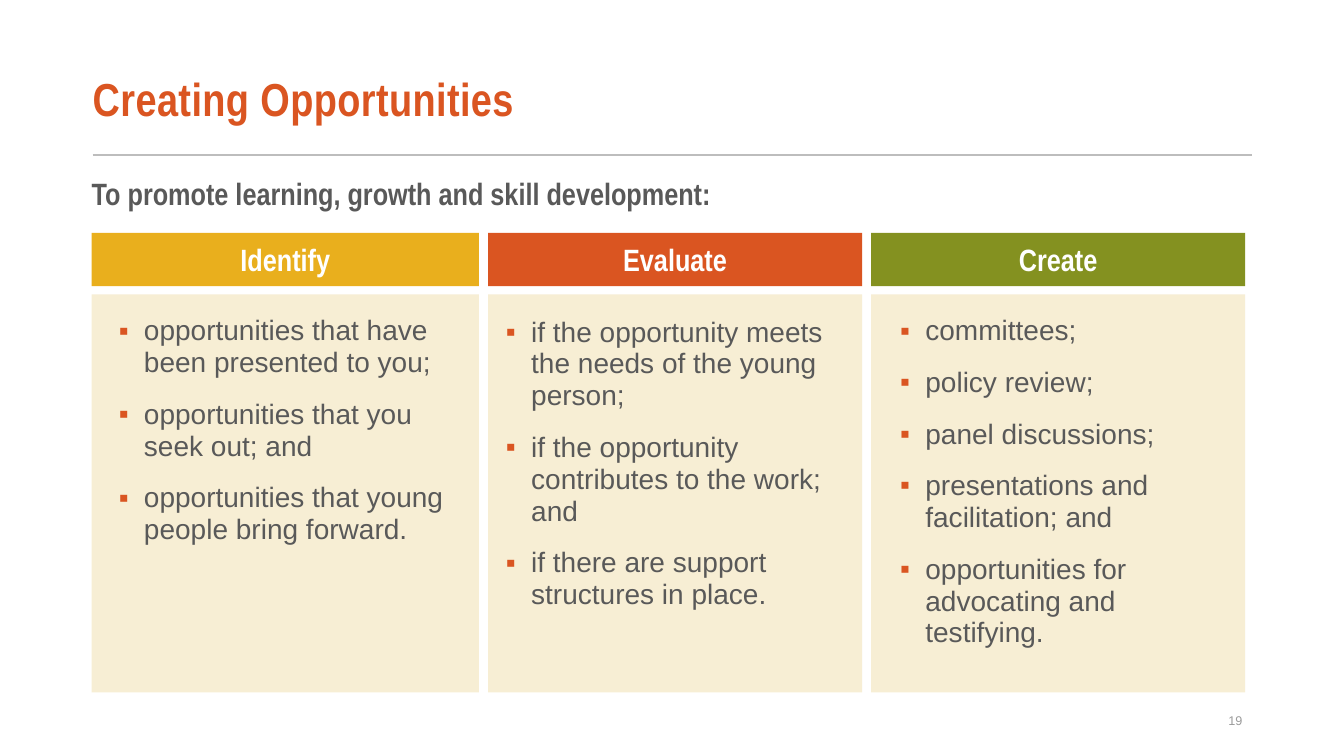
"""Builds the Creating Opportunities slide with three headed columns."""
from dataclasses import dataclass

from lxml.etree import SubElement
from pptx import Presentation
from pptx.dml.color import RGBColor
from pptx.enum.shapes import MSO_CONNECTOR, MSO_SHAPE
from pptx.enum.text import MSO_ANCHOR, PP_ALIGN
from pptx.oxml.ns import qn
from pptx.util import Inches, Pt

TITLE = "Creating Opportunities"
LEAD = "To promote learning, growth and skill development:"
PAGE = "19"
COLUMNS = [
    {"head": "Identify", "color": "E9AF1D", "width": 3.84, "text": (0.17, 0.16, 3.6),
     "items": ["opportunities that have been presented to you;",
               "opportunities that you seek out; and",
               "opportunities that young people bring forward."]},
    {"head": "Evaluate", "color": "DA5521", "width": 3.71, "text": (0.08, 0.17, 3.42),
     "items": ["if the opportunity meets the needs of the young person;",
               "if the opportunity contributes to the work; and",
               "if there are support structures in place."]},
    {"head": "Create", "color": "849120", "width": 3.71, "text": (0.19, 0.16, 3.43),
     "items": ["committees;", "policy review;", "panel discussions;",
               "presentations and facilitation; and",
               "opportunities for advocating and testifying."]},
]


@dataclass(frozen=True)
class Theme:
    """Colours, fonts and type sizes."""
    accent: str = "DA5521"
    body: str = "595959"
    panel: str = "F7EED4"
    rule: str = "BDBDBD"
    muted: str = "9B9B9B"
    white: str = "FFFFFF"
    narrow: str = "Arial Narrow"
    plain: str = "Arial"
    title: int = 33
    head: int = 22
    text: int = 20
    page: float = 9


T = Theme()
LEFT, WIDTH, GAP = 0.91, 11.5, 0.09
HEAD_TOP, HEAD_H, PANEL_H = 2.31, 0.53, 3.95
PANEL_TOP = HEAD_TOP + HEAD_H + 0.08


def rgb(value):
    return RGBColor.from_string(value)


def add_text(p, text, size, color, font, bold=False):
    r = p.add_run()
    r.text = text
    r.font.size, r.font.name, r.font.bold = Pt(size), font, bold
    r.font.color.rgb = rgb(color)
    return r


def add_box(s, x, y, w, h, inset=0.1, anchor=MSO_ANCHOR.TOP):
    tf = s.shapes.add_textbox(*map(Inches, (x, y, w, h))).text_frame
    tf.word_wrap = True
    tf.margin_left = Inches(inset)
    tf.vertical_anchor = anchor
    return tf


def add_rect(s, x, y, w, h, color):
    sp = s.shapes.add_shape(MSO_SHAPE.RECTANGLE, *map(Inches, (x, y, w, h)))
    sp.shadow.inherit = False
    sp.fill.solid()
    sp.fill.fore_color.rgb = rgb(color)
    sp.line.fill.background()
    return sp


def add_bullet(p):
    pPr = p._p.get_or_add_pPr()
    pPr.set("marL", str(Inches(0.25)))
    pPr.set("indent", str(Inches(-0.25)))
    SubElement(SubElement(pPr, qn("a:buClr")), qn("a:srgbClr"), val=T.accent)
    SubElement(pPr, qn("a:buFont"), typeface=T.plain)
    SubElement(pPr, qn("a:buChar"), char="▪")


def add_column(s, x, column):
    add_rect(s, x, PANEL_TOP, column["width"], PANEL_H, T.panel)
    sp = add_rect(s, x, HEAD_TOP, column["width"], HEAD_H, column["color"])
    tf = sp.text_frame
    tf.vertical_anchor = MSO_ANCHOR.MIDDLE
    tf.paragraphs[0].alignment = PP_ALIGN.CENTER
    add_text(tf.paragraphs[0], column["head"], T.head, T.white, T.narrow, True)

    dx, dy, w = column["text"]
    tf = add_box(s, x + dx, PANEL_TOP + dy, w, PANEL_H - 2 * dy)
    for i, item in enumerate(column["items"]):
        p = tf.add_paragraph() if i else tf.paragraphs[0]
        add_bullet(p)
        p.line_spacing = 0.95
        p.space_before = Pt(14 if i else 0)
        add_text(p, item, T.text, T.body, T.plain)


def main():
    prs = Presentation()
    prs.slide_width, prs.slide_height = Inches(13.33), Inches(7.5)
    s = prs.slides.add_slide(prs.slide_layouts[6])

    rule = s.shapes.add_connector(
        MSO_CONNECTOR.STRAIGHT, *map(Inches, (0.92, 1.54, 0.92 + WIDTH, 1.54)))
    rule.line.color.rgb, rule.line.width = rgb(T.rule), Pt(1.5)
    SubElement(rule._element.spPr, qn("a:effectLst"))

    p = add_box(s, 0.92, 0.54, WIDTH, 0.95, 0, MSO_ANCHOR.MIDDLE).paragraphs[0]
    p.line_spacing = 0.87
    r = add_text(p, TITLE, T.title, T.accent, T.narrow, True)
    r.font._element.set("spc", "30")

    p = add_box(s, LEFT, 1.67, WIDTH, 0.55, 0).paragraphs[0]
    p.line_spacing = 1.05
    add_text(p, LEAD, T.head, T.body, T.narrow, True)

    x = LEFT
    for column in COLUMNS:
        add_column(s, x, column)
        x += column["width"] + GAP

    p = add_box(s, 9.42, 6.95, 3, 0.4, anchor=MSO_ANCHOR.MIDDLE).paragraphs[0]
    p.alignment = PP_ALIGN.RIGHT
    add_text(p, PAGE, T.page, T.muted, T.plain)
    prs.save("out.pptx")


if __name__ == "__main__":
    main()
